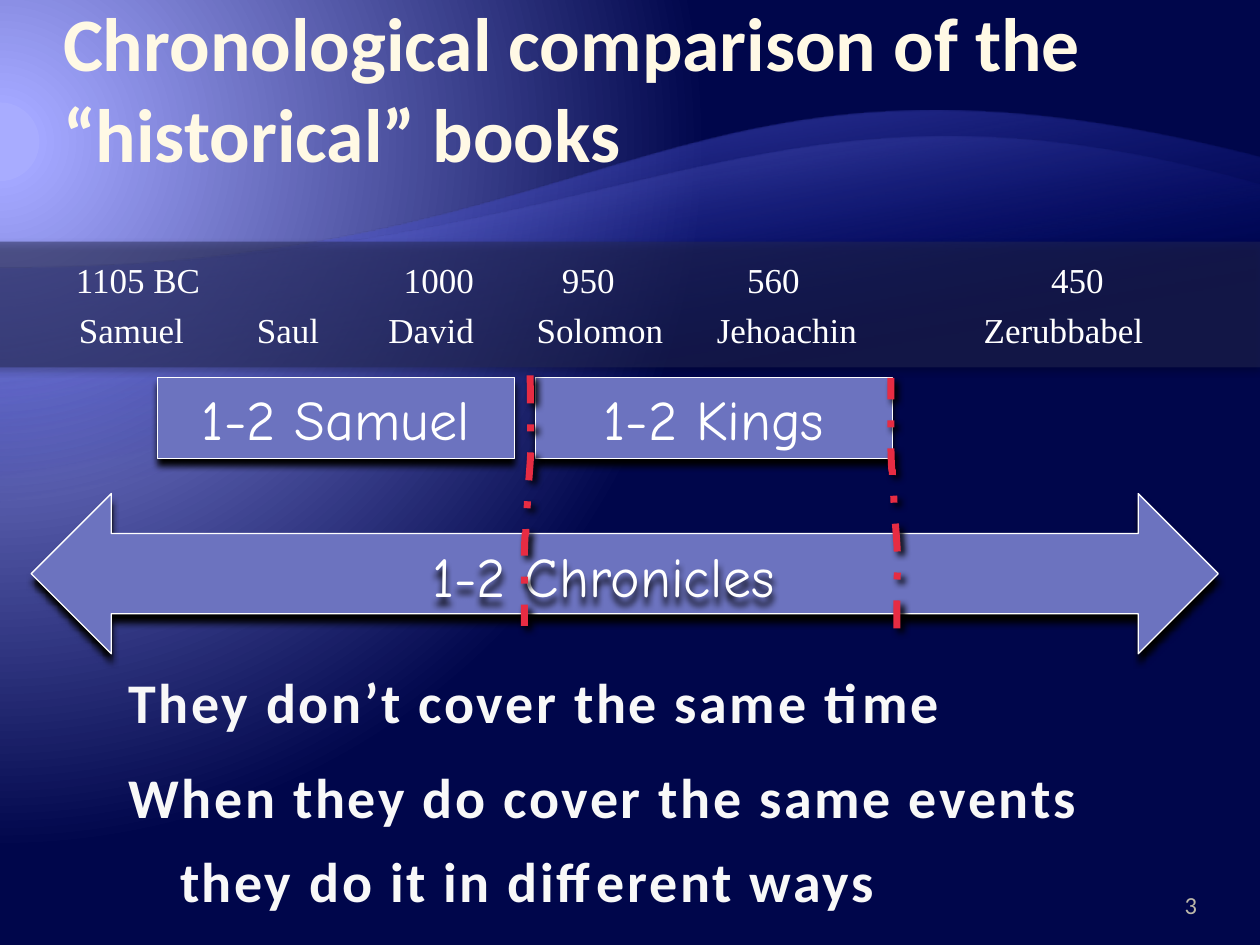
from pptx import Presentation
from pptx.dml.color import RGBColor
from pptx.enum.dml import MSO_LINE
from pptx.enum.shapes import MSO_SHAPE
from pptx.enum.text import MSO_ANCHOR, PP_ALIGN
from pptx.oxml import parse_xml
from pptx.oxml.ns import nsdecls, qn
from pptx.util import Cm, Pt
from lxml.etree import SubElement

COLORS = {
    "core": "A8ACFF", "glow": "A3A7FF", "night": "00064B", "wave": "000D9E",
    "wave_edge": "797FFF", "title": "FFF9E5", "band": "242852", "box": "6C73BF",
    "white": "FFFFFF", "body": "F8F8F8", "divider": "E72C43", "number": "BDB8A9",
    "shadow": "000000",
}


def write(sp, text, font, size, color, align=PP_ALIGN.LEFT, bold=False, spacing=0, wrap=True):
    tf = sp.text_frame
    tf.word_wrap = wrap
    tf.text = text
    p = tf.paragraphs[0]
    p.alignment = align
    r = p.runs[0]
    r.font.name = font
    r.font.size = Pt(size)
    r.font.bold = bold
    r.font.color.rgb = RGBColor.from_string(COLORS[color])
    if spacing:
        r._r.get_or_add_rPr().set("spc", str(spacing))
    return tf


def add_shadow(sp, alpha=100, blur=4, dist=4, angle=90):
    sp.shadow.inherit = False
    effects = sp._element.spPr.find(qn("a:effectLst"))
    shadow = SubElement(effects, qn("a:outerShdw"), blurRad=str(Pt(blur)), dist=str(Pt(dist)),
                        dir=str(angle * 60000), algn="ctr", rotWithShape="0")
    clr = SubElement(shadow, qn("a:srgbClr"), val=COLORS["shadow"])
    SubElement(clr, qn("a:alpha"), val=str(alpha * 1000))


prs = Presentation()
prs.slide_width, prs.slide_height = Cm(25.4), Cm(19.05)
s = prs.slides.add_slide(prs.slide_layouts[5])

s.background.fill.solid()
bg = s.background._cSld.bg.bgPr
bg.replace(bg[0], parse_xml(
    f'<a:gradFill {nsdecls("a")} rotWithShape="1"><a:gsLst>'
    f'<a:gs pos="5000"><a:srgbClr val="{COLORS["core"]}"/></a:gs>'
    f'<a:gs pos="5000"><a:srgbClr val="{COLORS["glow"]}"/></a:gs>'
    f'<a:gs pos="90000"><a:srgbClr val="{COLORS["night"]}"/></a:gs></a:gsLst>'
    '<a:path path="circle"><a:fillToRect l="20000" t="30000" r="135000" b="100000"/></a:path>'
    '</a:gradFill>'))

waves = [
    ([(0, 5.41), (12.7, 5.41), (13.56, 0.13), (25.4, 3.18)], 18.62, "wave_edge", 55),
    ([(0, 5.41), (12.7, 5.41), (15.19, 0.79), (25.4, 3.73)], 16.18, "glow", 30),
]
divider = [(10.69, 7.57), (10.69, 9.37), (10.74, 8.66), (10.64, 9.96),
           (10.62, 10.36), (10.64, 10.21), (10.59, 10.44),
           (10.62, 11.18), (10.59, 10.24), (10.57, 11.25),
           (10.57, 11.71), (10.57, 12.17), (10.57, 12.62)]

outlines = []
for curve, bottom, edge, alpha in waves:
    middle = curve[-1][1] + bottom
    turned = [(25.4 - x, middle - y) for x, y in curve]
    outlines.append((turned, [(0, curve[-1][1]), (25.4, curve[-1][1])]))
outlines.append((divider, []))
outlines.append(([(x + 7.39, 20.24 - y) for x, y in divider], []))

freeforms = []
for curve, corners in outlines:
    knots = [(Cm(x), Cm(y)) for x, y in curve[::3] + corners]
    fb = s.shapes.build_freeform(*knots[0])
    fb.add_line_segments(knots[1:], close=bool(corners))
    sp = fb.convert_to_shape()
    lines = sp._element.findall(".//" + qn("a:lnTo"))
    for i, line in enumerate(lines[:len(curve) // 3]):
        line.tag = qn("a:cubicBezTo")
        for n, (x, y) in enumerate(curve[3 * i + 1:3 * i + 3]):
            pt = SubElement(line, qn("a:pt"), x=str(Cm(x) - sp.left), y=str(Cm(y) - sp.top))
            line.insert(n, pt)
    sp.shadow.inherit = False
    freeforms.append(sp)

for sp, (curve, bottom, edge, alpha) in zip(freeforms, waves):
    sp.rotation = 180
    sp.line.fill.background()
    sp.fill.solid()
    spPr = sp._element.spPr
    spPr.replace(spPr.find(qn("a:solidFill")), parse_xml(
        f'<a:gradFill {nsdecls("a")} rotWithShape="1"><a:gsLst>'
        f'<a:gs pos="65000"><a:srgbClr val="{COLORS["wave"]}"><a:alpha val="0"/></a:srgbClr></a:gs>'
        f'<a:gs pos="100000"><a:srgbClr val="{COLORS[edge]}"><a:alpha val="{alpha * 1000}"/>'
        f'</a:srgbClr></a:gs></a:gsLst><a:lin ang="{80 * 60000}" scaled="0"/></a:gradFill>'))

title = s.shapes.title
s.shapes._spTree.append(title._element)
title.left, title.top, title.width, title.height = Cm(1.27), Cm(0.43), Cm(22.86), Cm(3.18)
tf = write(title, "Chronological comparison of the “historical” books", "Calibri", 43.2, "title", bold=True)
tf.vertical_anchor = MSO_ANCHOR.BOTTOM
tf.margin_left = tf.margin_right = 0
tf.margin_top = tf.margin_bottom = Cm(0.03)

band = s.shapes.add_shape(MSO_SHAPE.RECTANGLE, Cm(-0.64), Cm(4.87), Cm(26.04), Cm(2.54))
band.fill.solid()
band.fill.fore_color.rgb = RGBColor.from_string(COLORS["band"])
SubElement(band._element.spPr.find(".//" + qn("a:srgbClr")), qn("a:alpha"), val="50000")
band.line.fill.background()
add_shadow(band, alpha=43, dist=2)

timeline = {
    6.22: [(1.59, 4.14, "Samuel"), (5.18, 1.88, "Saul"), (7.83, 2.74, "David"),
           (10.82, 4.14, "Solomon"), (14.45, 4.14, "Jehoachin"), (19.83, 4.85, "Zerubbabel")],
    5.21: [(1.53, 3.45, "1105 BC"), (8.14, 2.24, "1000"), (11.33, 2.24, "950"),
           (15.06, 2.24, "560"), (21.19, 2.24, "450")],
}
for top, labels in timeline.items():
    for left, width, text in labels:
        sp = s.shapes.add_textbox(Cm(left), Cm(top), Cm(width), Cm(0.86))
        tf = write(sp, text, "Times New Roman", 20, "white")
        tf.margin_left = tf.margin_top = tf.margin_right = tf.margin_bottom = 0

books = [
    (MSO_SHAPE.RECTANGLE, 10.8, 7.61, 7.19, 1.63, "1-2 Kings"),
    (MSO_SHAPE.RECTANGLE, 3.18, 7.61, 7.19, 1.63, "1-2 Samuel"),
    (MSO_SHAPE.LEFT_RIGHT_ARROW, 0.63, 9.95, 23.93, 3.23, ""),
]
for kind, left, top, width, height, text in books:
    sp = s.shapes.add_shape(kind, Cm(left), Cm(top), Cm(width), Cm(height))
    sp.fill.solid()
    sp.fill.fore_color.rgb = RGBColor.from_string(COLORS["box"])
    sp.line.color.rgb = RGBColor.from_string(COLORS["white"])
    sp.line.width = Pt(0.75)
    add_shadow(sp)
    if text:
        write(sp, text, "Comic Neue", 32, "white", PP_ALIGN.CENTER)

sp = s.shapes.add_textbox(Cm(7.82), Cm(10.8), Cm(8.69), Cm(1.63))
write(sp, "1-2 Chronicles", "Comic Neue", 32, "white", PP_ALIGN.CENTER)
add_shadow(sp)

for left, top, width, text in [
    (2.34, 13.34, 17.58, "They don’t cover the same time"),
    (2.34, 15.24, 20.37, "When they do cover the same events"),
    (3.38, 16.94, 15.14, "they do it in different ways"),
]:
    sp = s.shapes.add_textbox(Cm(left), Cm(top), Cm(width), Cm(1.63))
    write(sp, text, "Calibri", 32, "body", bold=True, spacing=150, wrap=False)

for sp in freeforms[2:]:
    s.shapes._spTree.append(sp._element)
    sp.fill.background()
    sp.line.color.rgb = RGBColor.from_string(COLORS["divider"])
    sp.line.width = Pt(4)
    sp.line.dash_style = MSO_LINE.DASH_DOT
    add_shadow(sp, dist=3, angle=45)

sp = s.shapes.add_textbox(Cm(22.66), Cm(17.65), Cm(1.47), Cm(1.02))
tf = write(sp, "3", "Calibri", 14, "number", PP_ALIGN.RIGHT)
tf.vertical_anchor = MSO_ANCHOR.BOTTOM
tf.margin_right = 0

prs.save("out.pptx")
